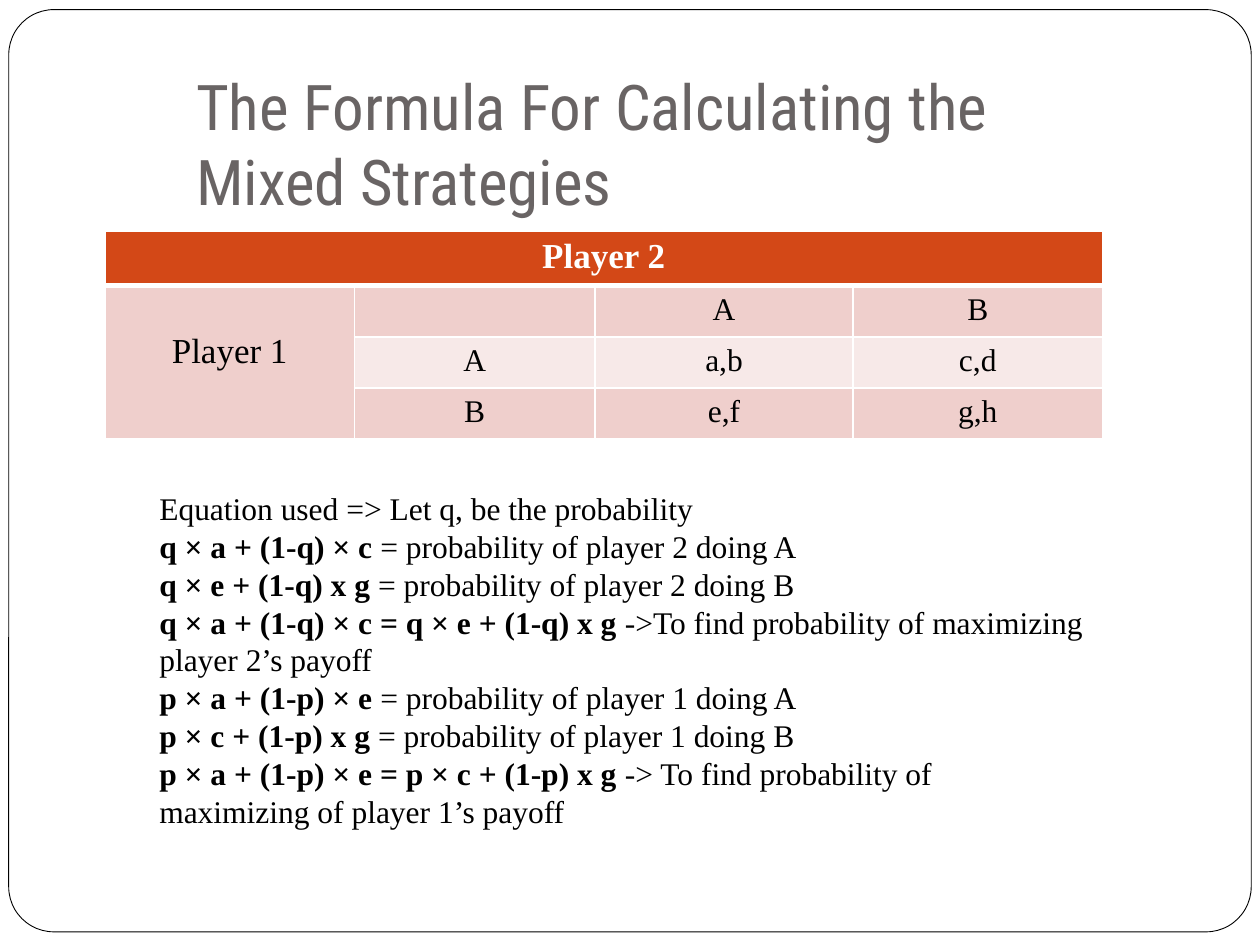
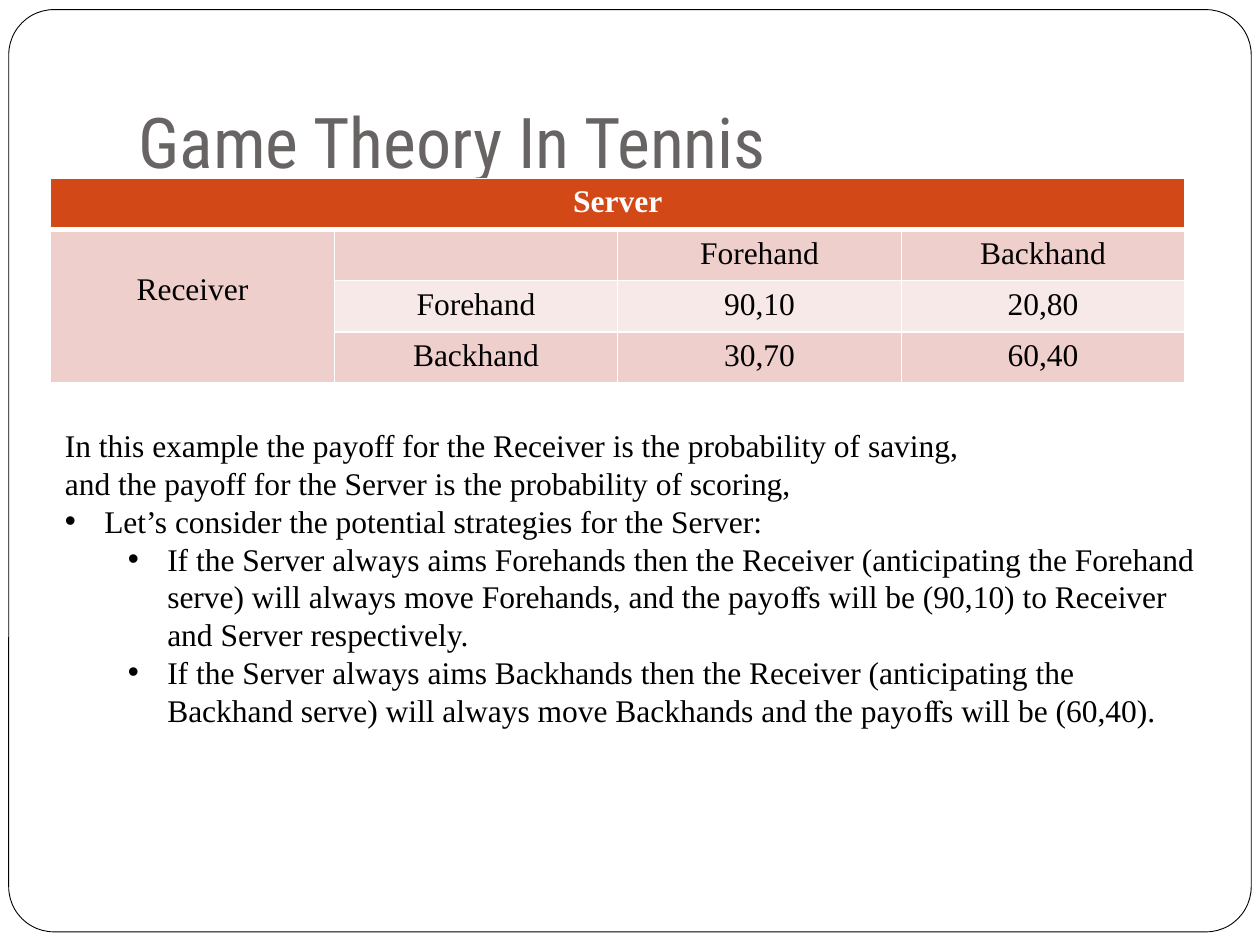
"""Builds two slides on mixed strategies, each with a payoff table and notes."""
from lxml.etree import SubElement, fromstring
from pptx import Presentation
from pptx.dml.color import RGBColor
from pptx.enum.shapes import MSO_SHAPE as Shape
from pptx.enum.text import MSO_ANCHOR as Anchor, PP_ALIGN as Align
from pptx.oxml.ns import nsdecls, qn
from pptx.util import Pt

WHITE, BLACK, GREY = "FFFFFF", "000000", "696464"
HEADER, BAND_DARK, BAND_LIGHT = "D34817", "EFCFCC", "F7E9E8"
TITLE_FONT, BODY_FONT = "Roboto Condensed", "Times New Roman"
ROW_HEIGHT = 29.2
BULLET_HANG = 22.5
rgb = RGBColor.from_string


def write(para, text, size=18, font=BODY_FONT, color=BLACK, bold=False, align=Align.LEFT):
    para.alignment = align
    span = para.add_run()
    span.text = text
    span.font.size = Pt(size)
    span.font.name = font
    span.font.bold = bold
    span.font.color.rgb = rgb(color)


def add_box(page, left, top, width, height):
    box = page.shapes.add_textbox(Pt(left), Pt(top), Pt(width), Pt(height))
    box.text_frame.word_wrap = True
    return box.text_frame


slides = [
    {
        "title": "The Formula For Calculating the Mixed Strategies",
        "title_size": 36,
        "title_at": (105, 78, 504, 54),
        "table_at": (60, 132),
        "columns": (142.5, 137.5, 147.5, 142.5),
        "player_size": 20,
        "payoffs": [
            ["Player 2", "", "", ""],
            ["Player 1", "", "A", "B"],
            ["", "A", "a,b", "c,d"],
            ["", "B", "e,f", "g,h"],
        ],
        "notes_at": (84, 276, 546, 225),
        "notes": [
            (None, "", "Equation used => Let q, be the probability"),
            (None, "q × a + (1-q) × c ", "= probability of player 2 doing A"),
            (None, "q × e + (1-q) x g ", "= probability of player 2 doing B"),
            (None, "q × a + (1-q) × c = q × e + (1-q) x g ",
             "->To find probability of maximizing player 2’s payoff"),
            (None, "p × a + (1-p) × e ", "= probability of player 1 doing A"),
            (None, "p × c + (1-p) x g ", "= probability of player 1 doing B"),
            (None, "p × a + (1-p) × e = p × c + (1-p) x g ",
             "-> To find probability of maximizing of player 1’s payoff"),
        ],
    },
    {
        "title": "Game Theory In Tennis",
        "title_size": 40,
        "title_at": (72, 21.6, 612, 90),
        "table_at": (29, 102),
        "columns": (162,) * 4,
        "player_size": 18,
        "payoffs": [
            ["Server", "", "", ""],
            ["Receiver", "", "Forehand", "Backhand"],
            ["", "Forehand", "90,10", "20,80"],
            ["", "Backhand", "30,70", "60,40"],
        ],
        "notes_at": (30, 240, 666, 181),
        "notes": [
            (None, "", "In this example the payoff for the Receiver is the probability of saving,"),
            (None, "", "and the payoff for the Server is the probability of scoring,"),
            (0, "", "Let’s consider the potential strategies for the Server:"),
            (1, "", "If the Server always aims Forehands then the Receiver (anticipating the "
             "Forehand serve) will always move Forehands, and the payoﬀs will be (90,10) "
             "to Receiver and Server respectively."),
            (1, "", "If the Server always aims Backhands then the Receiver (anticipating the "
             "Backhand serve) will always move Backhands and the payoﬀs will be (60,40)."),
        ],
    },
]

deck = Presentation()
deck.slide_width, deck.slide_height = Pt(720), Pt(540)

for content in slides:
    page = deck.slides.add_slide(deck.slide_layouts[6])

    frame = page.shapes.add_shape(Shape.ROUNDED_RECTANGLE, Pt(5), Pt(5.5), Pt(710), Pt(527))
    frame.adjustments[0] = 0.049
    frame.shadow.inherit = False
    frame.fill.solid()
    frame.fill.fore_color.rgb = rgb(WHITE)
    frame.line.color.rgb = rgb(BLACK)
    frame.line.width = Pt(0.5)

    title = add_box(page, *content["title_at"])
    title.vertical_anchor = Anchor.BOTTOM
    title.margin_bottom = Pt(7.2)
    write(title.paragraphs[0], content["title"], size=content["title_size"],
          font=TITLE_FONT, color=GREY)

    left, top = content["table_at"]
    columns, payoffs = content["columns"], content["payoffs"]
    table = page.shapes.add_table(len(payoffs), len(columns), Pt(left), Pt(top),
                                  Pt(sum(columns)), Pt(ROW_HEIGHT * len(payoffs))).table
    table.first_row = table.horz_banding = False
    for column, width in zip(table.columns, columns):
        column.width = Pt(width)
    table.cell(0, 0).merge(table.cell(0, 3))
    table.cell(1, 0).merge(table.cell(3, 0))
    player_size = content["player_size"]
    table.cell(1, 0).margin_top = Pt(3.6 + 1.15 * player_size)

    for row, values in enumerate(payoffs):
        for col, value in enumerate(values):
            cell = table.cell(row, col)
            cell.fill.solid()
            shade = HEADER if row == 0 else BAND_LIGHT if row == 2 and col else BAND_DARK
            cell.fill.fore_color.rgb = rgb(shade)
            if value:
                write(cell.text_frame.paragraphs[0], value,
                      size=player_size if col == 0 else 18,
                      color=BLACK if row else WHITE, bold=row == 0, align=Align.CENTER)
            widths = {"lnL": 1, "lnR": 1, "lnT": 3 if row == 1 else 1, "lnB": 1 if row else 3}
            for place, (side, width) in enumerate(widths.items()):
                border = fromstring(
                    f'<a:{side} {nsdecls("a")} w="{Pt(width)}"><a:solidFill>'
                    f'<a:srgbClr val="{WHITE}"/></a:solidFill></a:{side}>')
                cell._tc.get_or_add_tcPr().insert(place, border)

    notes = add_box(page, *content["notes_at"])
    for number, (level, formula, text) in enumerate(content["notes"]):
        para = notes.add_paragraph() if number else notes.paragraphs[0]
        if formula:
            write(para, formula, bold=True)
        write(para, text)
        if level is not None:
            para.level = level
            settings = para._p.get_or_add_pPr()
            settings.set("marL", str(Pt(BULLET_HANG + 36 * level)))
            settings.set("indent", str(Pt(-BULLET_HANG)))
            SubElement(settings, qn("a:buFont")).set("typeface", "Arial")
            SubElement(settings, qn("a:buChar")).set("char", "•")

deck.save("out.pptx")
